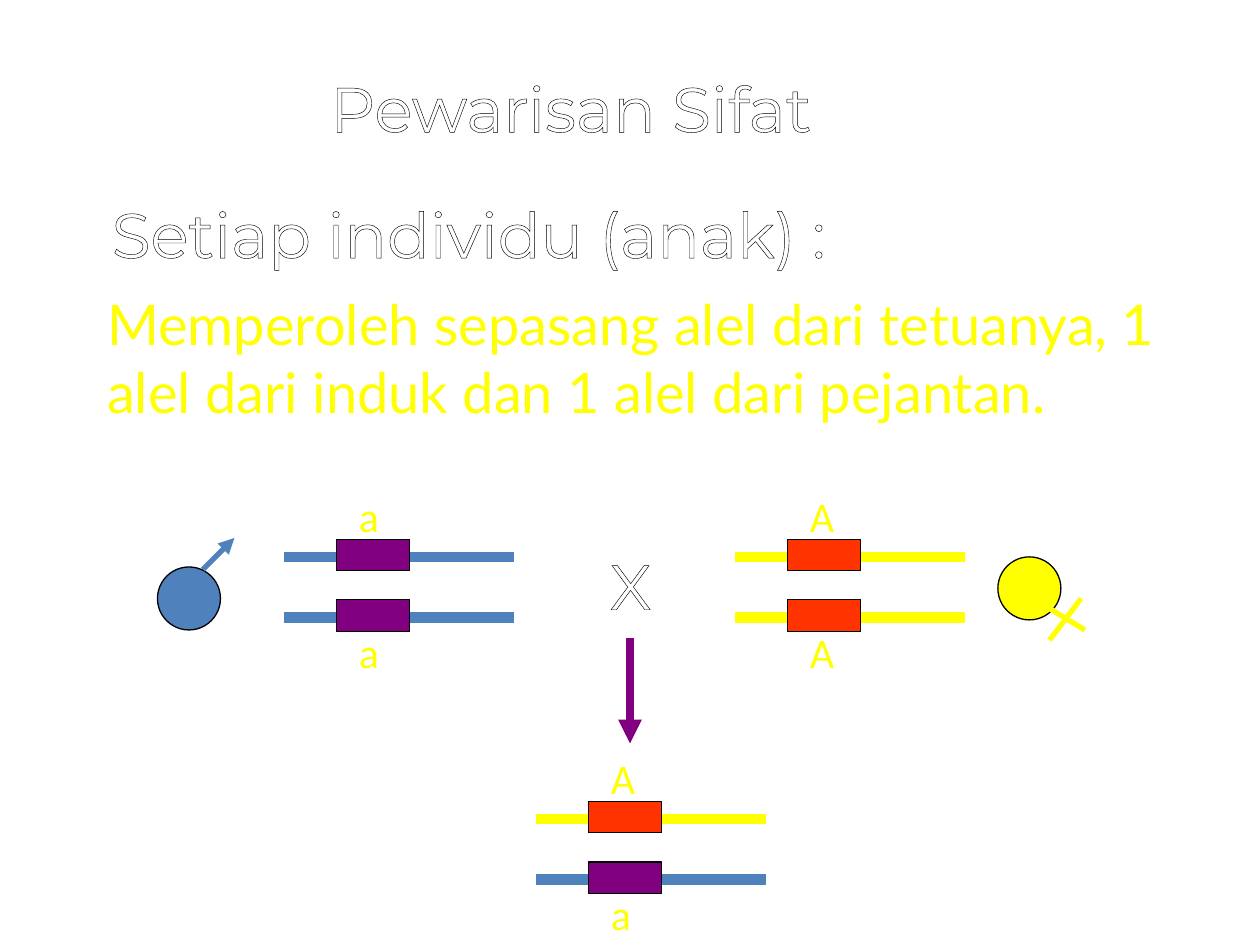
import pptx
import pptx.util
import pptx.oxml
import pptx.oxml.ns
import pptx.dml.color
import pptx.enum.shapes
import pptx.enum.text
from lxml import etree

Inches = pptx.util.Inches
Pt = pptx.util.Pt
qn = pptx.oxml.ns.qn
SHAPE = pptx.enum.shapes.MSO_SHAPE
ALIGN = pptx.enum.text.PP_ALIGN

WHITE, BLACK = "FFFFFF", "000000"
BLUE, YELLOW = "4F81BD", "FFFF00"
PURPLE, RED = "800080", "FF3300"


def paint(target, color):
    """Give a fill a solid colour."""
    target.solid()
    target.fore_color.rgb = pptx.dml.color.RGBColor.from_string(color)


def place(shape, left, top, width, height):
    shape.left, shape.top = Inches(left), Inches(top)
    shape.width, shape.height = Inches(width), Inches(height)


def write(shape, text, size, font, color, align=ALIGN.LEFT, wrap=True):
    """Fill a text frame with one paragraph of one run."""
    frame = shape.text_frame
    frame.word_wrap = wrap
    frame.auto_size = pptx.enum.text.MSO_AUTO_SIZE.NONE
    frame.vertical_anchor = pptx.enum.text.MSO_ANCHOR.TOP
    para = frame.paragraphs[0]
    para.alignment = align
    para.space_before = Pt(0)
    run = para.add_run()
    run.text = text
    run.font.size = Pt(size)
    run.font.name = font
    paint(run.font.fill, color)
    return run


def outline(shape, text):
    """Write a white heading with a thin black outline."""
    run = write(shape, text, 36, "Montserrat", WHITE, ALIGN.CENTER, False)
    edge = etree.Element(qn("a:ln"), w=str(Pt(0.75)))
    solid = etree.SubElement(edge, qn("a:solidFill"))
    etree.SubElement(solid, qn("a:srgbClr"), val=BLACK)
    run.font.fill  # the outline goes ahead of the fill
    run._r.get_or_add_rPr().insert(0, edge)


def box(shapes, left, top, width, height):
    return shapes.add_textbox(Inches(left), Inches(top), Inches(width), Inches(height))


def line(shapes, start, end, color, width, arrow=False):
    link = shapes.add_connector(
        pptx.enum.shapes.MSO_CONNECTOR.STRAIGHT,
        *(Inches(n) for n in (*start, *end)))
    link.line.width = Pt(width)
    paint(link.line.fill, color)
    props = link._element.spPr
    if arrow:
        etree.SubElement(props.find(qn("a:ln")), qn("a:tailEnd"), type="triangle")
    etree.SubElement(props, qn("a:effectLst"))


def solid(shapes, kind, left, top, width, height, color):
    shape = shapes.add_shape(
        kind, Inches(left), Inches(top), Inches(width), Inches(height))
    shape.shadow.inherit = False
    paint(shape.fill, color)
    paint(shape.line.fill, BLACK)
    shape.line.width = Pt(0.75)


def strand(shapes, left, mid, color, allele, above):
    """Draw a chromosome with its gene and the allele's letter."""
    gene = RED if allele == "A" else PURPLE
    line(shapes, (left, mid), (left + 1.83, mid), color, 6)
    solid(shapes, SHAPE.RECTANGLE, left + 0.42, mid - 0.14, 0.58, 0.25, gene)
    top = mid - 0.58 if above else mid + 0.02
    label = box(shapes, left + 0.5, top, 0.42, 0.5)
    write(label, allele, 24, "Calibri", YELLOW)


def pair(slide, left, mid, upper, lower):
    """Group two strands, each given as (colour, allele)."""
    shapes = slide.shapes.add_group_shape().shapes
    strand(shapes, left, mid, *upper, True)
    strand(shapes, left, mid + 0.48, *lower, False)
    return shapes


def main():
    deck = pptx.Presentation()
    deck.slide_width, deck.slide_height = Inches(10), Inches(7.5)
    slide = deck.slides.add_slide(deck.slide_layouts[1])

    # Headings
    title, body = slide.shapes.title, slide.placeholders[1]
    place(title, 1.58, 0.5, 5.9, 0.71)
    outline(title, "Pewarisan Sifat")
    outline(box(slide.shapes, 0.58, 1.5, 6.28, 0.71), "Setiap individu (anak) :")

    # Statement, without bullet or indent
    place(body, 0.75, 2.25, 8.75, 1.17)
    write(body, "Memperoleh sepasang alel dari tetuanya, 1 alel dari induk "
          "dan 1 alel dari pejantan.", 32, "Lato", YELLOW)
    props = body.text_frame.paragraphs[0]._p.get_or_add_pPr()
    props.set("marL", "0")
    props.set("indent", "0")
    etree.SubElement(props, qn("a:buNone"))

    # Cross and its arrow
    outline(box(slide.shapes, 4.81, 4.29, 0.39, 0.71), "X")
    line(slide.shapes, (5, 5.06), (5, 5.9), PURPLE, 4.5, True)

    # Offspring
    pair(slide, 4.25, 6.5, (YELLOW, "A"), (BLUE, "a"))

    # Male parent
    male = pair(slide, 2.25, 4.42, (BLUE, "a"), (BLUE, "a"))
    solid(male, SHAPE.OVAL, 1.25, 4.5, 0.5, 0.5, BLUE)
    line(male, (1.61, 4.52), (1.86, 4.27), BLUE, 3, True)

    # Female parent
    female = pair(slide, 5.83, 4.42, (YELLOW, "A"), (YELLOW, "A"))
    solid(female, SHAPE.OVAL, 7.92, 4.42, 0.5, 0.5, YELLOW)
    line(female, (8.33, 4.83), (8.61, 5), YELLOW, 3)
    line(female, (8.58, 4.75), (8.33, 5.08), YELLOW, 3)

    deck.save("out.pptx")


if __name__ == "__main__":
    main()
